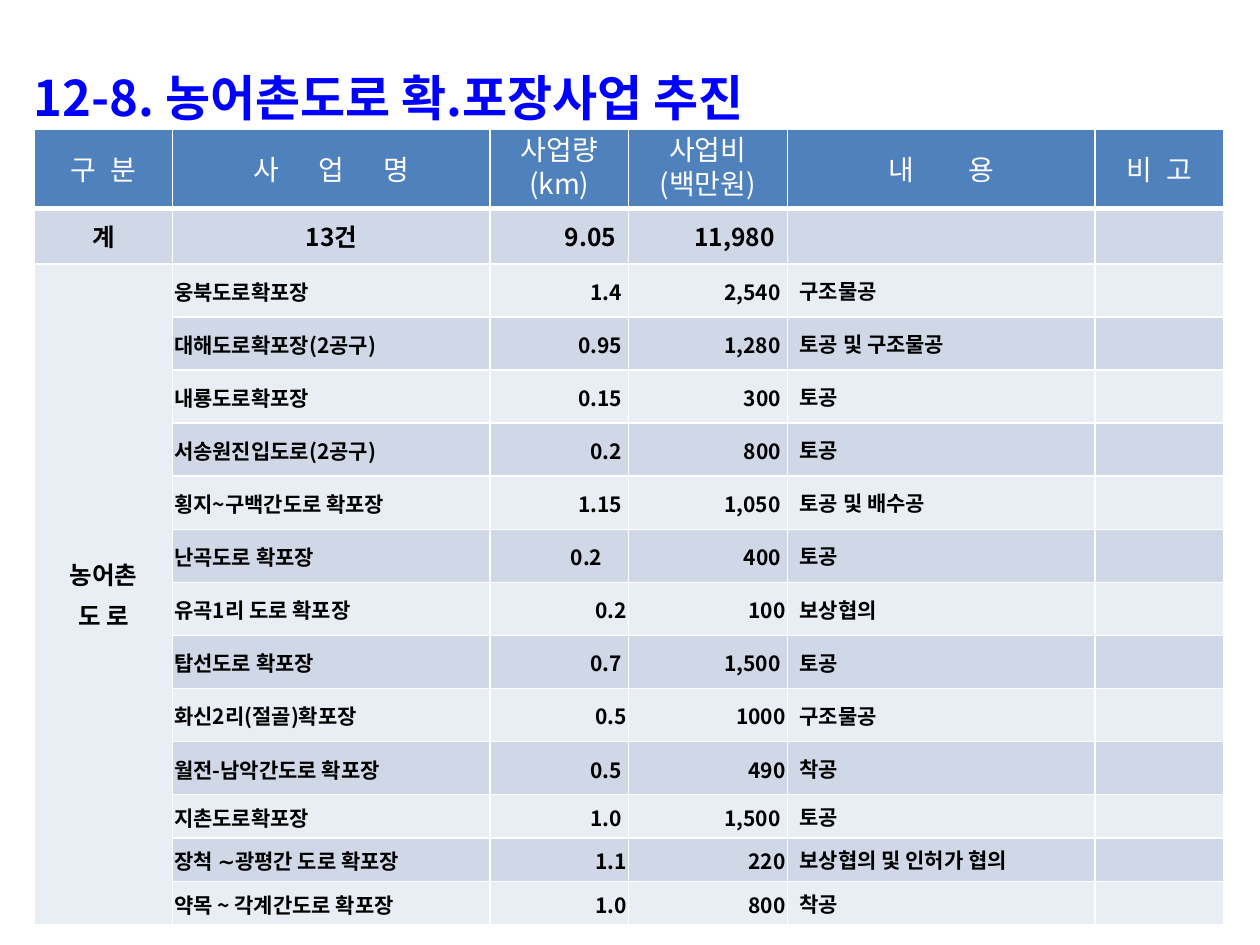
from dataclasses import dataclass

from lxml.etree import SubElement
from pptx import Presentation
from pptx.dml.color import RGBColor
from pptx.enum.text import MSO_ANCHOR, MSO_AUTO_SIZE, PP_ALIGN
from pptx.oxml.ns import qn
from pptx.util import Cm, Pt


@dataclass(frozen=True)
class Theme:
    font: str = "Noto Sans CJK KR"
    title: str = "0000FF"
    header: str = "4F81BD"
    bands: tuple = ("D0D8E8", "E9EDF4")
    light: str = "FFFFFF"
    ink: str = "000000"
    title_size: int = 28
    header_size: int = 16
    total_size: int = 14
    body_size: int = 12


THEME = Theme()
LEFT, CENTER, RIGHT = PP_ALIGN.LEFT, PP_ALIGN.CENTER, PP_ALIGN.RIGHT

# Cell insets in cm: left, top, right, bottom
WIDE = (0.25, 0.13, 0.25, 0.13)
TIGHT = (0.03, 0.03, 0.03, 0)
NEAR, FAR = 0.13, 0.53  # right insets of figures set in from the edge
EDGE = TIGHT[2]

COLUMN_WIDTHS = (2.79, 6.4, 2.79, 3.2, 6.2, 2.59)
ROW_HEIGHTS = (1.6, 1.12) + (1.07,) * 10 + (0.85,) * 3

# Header text and the extra width of its word gaps in points
HEADERS = (("구 분", 4.6), ("사 업 명", 18.8), ("사업량\n(km)", 0),
           ("사업비\n(백만원)", 0), ("내 용", 27.4), ("비 고", 4.6))
TOTALS = (("계", CENTER), ("13건", CENTER), ("9.05", RIGHT), ("11,980", RIGHT),
          ("", LEFT), ("", LEFT))
GROUP = "농어촌\n도 로"

# Project, length, its inset, cost, its inset, work
PROJECTS = (
    ("웅북도로확포장", "1.4", NEAR, "2,540", NEAR, "구조물공"),
    ("대해도로확포장(2공구)", "0.95", NEAR, "1,280", NEAR, "토공 및 구조물공"),
    ("내룡도로확포장", "0.15", NEAR, "300", NEAR, "토공"),
    ("서송원진입도로(2공구)", "0.2", NEAR, "800", NEAR, "토공"),
    ("횡지~구백간도로 확포장", "1.15", NEAR, "1,050", NEAR, "토공 및 배수공"),
    ("난곡도로 확포장", "0.2", FAR, "400", NEAR, "토공"),
    ("유곡1리 도로 확포장", "0.2", EDGE, "100", EDGE, "보상협의"),
    ("탑선도로 확포장", "0.7", NEAR, "1,500", NEAR, "토공"),
    ("화신2리(절골)확포장", "0.5", EDGE, "1000", EDGE, "구조물공"),
    ("월전-남악간도로 확포장", "0.5", NEAR, "490", EDGE, "착공"),
    ("지촌도로확포장", "1.0", NEAR, "1,500", NEAR, "토공"),
    ("장척 ∼광평간 도로 확포장", "1.1", EDGE, "220", EDGE, "보상협의 및 인허가 협의"),
    ("약목 ~ 각계간도로 확포장", "1.0", EDGE, "800", EDGE, "착공"),
)


def set_all(target, values):
    for name, value in values.items():
        setattr(target, name, value)


def add_run(paragraph, text, size, color, bold):
    run = paragraph.add_run()
    run.text = text
    set_all(run.font, {"name": THEME.font, "size": Pt(size), "bold": bold})
    run.font.color.rgb = RGBColor.from_string(color)
    properties = run.font._element
    SubElement(properties, qn("a:ea")).set("typeface", THEME.font)
    return properties


def set_borders(cell, bottom=1):
    properties = cell._tc.get_or_add_tcPr()
    sides = {"a:lnL": 1, "a:lnR": 1, "a:lnT": 1, "a:lnB": bottom}
    for position, (side, width) in enumerate(sides.items()):
        line = SubElement(properties, qn(side), w=str(Pt(width)))
        fill = SubElement(line, qn("a:solidFill"))
        SubElement(fill, qn("a:srgbClr"), val=THEME.light)
        properties.insert(position, line)  # borders come before the fill


def format_cell(cell, text, fill, size, align=LEFT, insets=WIDE, color=THEME.ink,
                bold=True, gap=0, line_spacing=1.0, bottom=1):
    names = ("margin_left", "margin_top", "margin_right", "margin_bottom")
    set_all(cell, dict(zip(names, map(Cm, insets))))
    cell.vertical_anchor = MSO_ANCHOR.MIDDLE
    cell.fill.solid()
    cell.fill.fore_color.rgb = RGBColor.from_string(fill)
    set_borders(cell, bottom)
    frame = cell.text_frame
    if not text:  # keeps an empty cell from stretching its row
        SubElement(frame.paragraphs[0]._p, qn("a:endParaRPr"), sz=str(size * 100))
        return
    for index, line in enumerate(text.split("\n")):
        paragraph = frame.add_paragraph() if index else frame.paragraphs[0]
        set_all(paragraph, {"alignment": align, "line_spacing": line_spacing,
                            "space_before": Pt(size * 0.2)})
        if not gap:
            add_run(paragraph, line, size, color, bold)
            continue
        for position, word in enumerate(line.split(" ")):
            if position:
                space = add_run(paragraph, " ", size, color, bold)
                space.set("spc", str(round(gap * 100)))
            add_run(paragraph, word, size, color, bold)


def add_title(slide, left, top, width, height):
    title = slide.shapes.title
    set_all(title, {"left": Cm(left), "top": Cm(top),
                    "width": Cm(width), "height": Cm(height)})
    set_all(title.text_frame, {"vertical_anchor": MSO_ANCHOR.TOP, "word_wrap": True,
                               "auto_size": MSO_AUTO_SIZE.NONE})
    paragraph = title.text_frame.paragraphs[0]
    set_all(paragraph, {"alignment": LEFT, "line_spacing": 1.2})
    add_run(paragraph, "12-8. 농어촌도로 확.포장사업 추진",
            THEME.title_size, THEME.title, True)


def add_project_table(slide, left, top):
    table = slide.shapes.add_table(
        len(ROW_HEIGHTS), len(COLUMN_WIDTHS), Cm(left), Cm(top),
        Cm(sum(COLUMN_WIDTHS)), Cm(sum(ROW_HEIGHTS))).table
    for column, width in zip(table.columns, COLUMN_WIDTHS):
        column.width = Cm(width)
    for row, height in zip(table.rows, ROW_HEIGHTS):
        row.height = Cm(height)

    # Header row
    for column, (text, gap) in enumerate(HEADERS):
        format_cell(table.cell(0, column), text, THEME.header, THEME.header_size,
                    CENTER, color=THEME.light, bold=False, gap=gap, bottom=3,
                    line_spacing=0.7 if "\n" in text else 1.0)

    # Totals row
    for column, (text, align) in enumerate(TOTALS):
        format_cell(table.cell(1, column), text, THEME.bands[0],
                    THEME.total_size, align)

    # Project rows
    for row, project in enumerate(PROJECTS, start=2):
        name, length, length_inset, cost, cost_inset, work = project
        cells = ((name, LEFT, TIGHT),
                 (length, RIGHT, (*TIGHT[:2], length_inset, 0)),
                 (cost, RIGHT, (*TIGHT[:2], cost_inset, 0)),
                 (work, LEFT, WIDE),
                 ("", LEFT, WIDE))
        for column, (text, align, insets) in enumerate(cells, start=1):
            format_cell(table.cell(row, column), text, THEME.bands[(row + 1) % 2],
                        THEME.body_size, align, insets)

    # Group label spanning every project
    last = len(ROW_HEIGHTS) - 1
    for row in range(2, last + 1):
        format_cell(table.cell(row, 0), GROUP if row == 2 else "", THEME.bands[1],
                    THEME.total_size if row == 2 else THEME.body_size, CENTER)
    table.cell(2, 0).merge(table.cell(last, 0))


def main():
    deck = Presentation()
    set_all(deck, {"slide_width": Cm(25.4), "slide_height": Cm(19.05)})
    slide = deck.slides.add_slide(deck.slide_layouts[5])
    add_title(slide, 0.43, 1, 24.8, 1.95)
    add_project_table(slide, 0.69, 2.6)
    deck.save("out.pptx")


if __name__ == "__main__":
    main()
